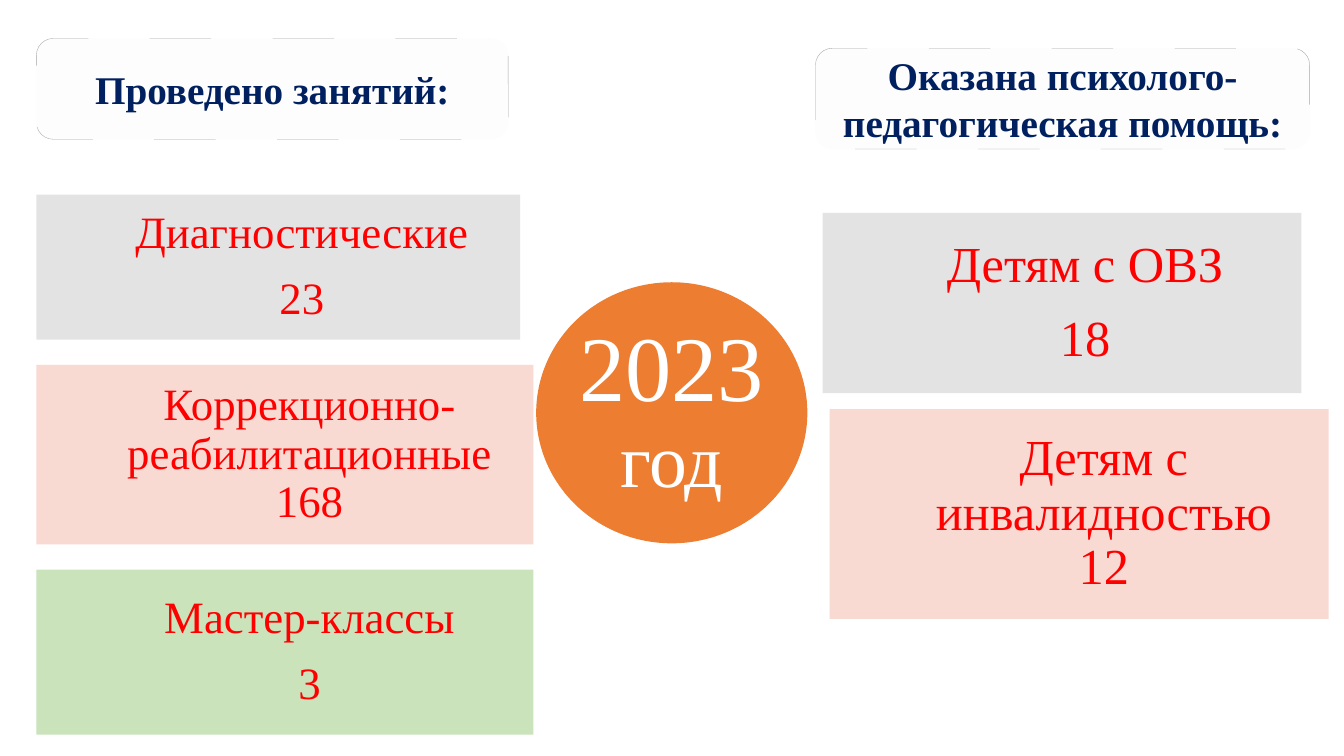
from lxml import etree
from pptx import Presentation
from pptx.dml.color import RGBColor
from pptx.enum.shapes import MSO_SHAPE
from pptx.enum.text import MSO_ANCHOR, PP_ALIGN
from pptx.oxml.ns import qn
from pptx.util import Pt

ROUNDED = MSO_SHAPE.ROUNDED_RECTANGLE
RECTANGLE = MSO_SHAPE.RECTANGLE
OVAL = MSO_SHAPE.OVAL
MIDDLE = MSO_ANCHOR.MIDDLE
CENTER = PP_ALIGN.CENTER

WHITE = RGBColor(0xFF, 0xFF, 0xFF)
NAVY = RGBColor(0x00, 0x20, 0x60)
RED = RGBColor(0xFF, 0x00, 0x00)
ORANGE = RGBColor(0xED, 0x7D, 0x31)
GREY = RGBColor(0xE1, 0xE1, 0xE1)
PINK = RGBColor(0xF8, 0xD7, 0xCE)
GREEN = RGBColor(0xC5, 0xE0, 0xB4)
OUTLINE = RGBColor(0xA6, 0xA6, 0xA6)
OFF_WHITE = RGBColor(0xFD, 0xFD, 0xFD)
FONT = "Times New Roman"

HEADINGS = [
    ("Оказана психолого-педагогическая помощь:", (582.5, 34.5, 353, 72)),
    ("Проведено занятий:", (26, 27.5, 337, 72)),
]
YEAR = [("2023 ", 66), ("год", 54)]
YEAR_BOX = (383, 201.6, 193.7, 186.5)
CARDS = [
    (["Детям с инвалидностью 12"], 36, PINK, (592.6, 292.3, 356.4, 149.8)),
    (["Детям с ОВЗ", "18"], 36, GREY, (587.5, 152, 342, 128.9)),
    (["Диагностические", "23"], 32, GREY, (26, 139, 345.6, 103.7)),
    (["Коррекционно-реабилитационные 168"], 32, PINK, (26, 260.6, 355, 128.2)),
    (["Мастер-классы", "3"], 32, GREEN, (26, 406.8, 355, 118)),
]
CARD_INSET = 21.6
CARD_INDENT = 0.16
LINE_SPACING = 0.9
SPACE_AFTER = 0.39


def add_block(slide, kind, box, fill, insets):
    block = slide.shapes.add_shape(kind, *map(Pt, box))
    block.shadow.inherit = False
    block.fill.solid()
    block.fill.fore_color.rgb = fill
    block.line.fill.background()
    frame = block.text_frame
    frame.word_wrap = True
    frame.vertical_anchor = MIDDLE
    frame.margin_left, frame.margin_top, frame.margin_right, frame.margin_bottom = map(Pt, insets)
    return block


def write(frame, paragraphs, color, bold=False, spaced=True):
    for index, pieces in enumerate(paragraphs):
        paragraph = frame.paragraphs[0] if index == 0 else frame.add_paragraph()
        paragraph.alignment = CENTER
        if spaced:
            paragraph.line_spacing = LINE_SPACING
            paragraph.space_after = Pt(round(pieces[0][1] * SPACE_AFTER, 1))
        for text, size in pieces:
            run = paragraph.add_run()
            run.text = text
            run.font.name = FONT
            run.font.size = Pt(size)
            run.font.bold = bold
            run.font.color.rgb = color


def make_translucent(block):
    color = block.fill._xPr.find(qn("a:solidFill")).find(qn("a:srgbClr"))
    etree.SubElement(color, qn("a:alpha"), val="90000")


def set_long_dashes(block):
    block.line.color.rgb = OUTLINE
    block.line.width = Pt(0.25)
    outline = block.line._get_or_add_ln()
    dashes = etree.SubElement(outline, qn("a:custDash"))
    etree.SubElement(dashes, qn("a:ds"), d="17200000", sp="17200000")


def main():
    deck = Presentation()
    deck.slide_width, deck.slide_height = Pt(960), Pt(540)
    slide = deck.slides.add_slide(deck.slide_layouts[6])

    for heading, box in HEADINGS:
        block = add_block(slide, ROUNDED, box, OFF_WHITE, (7.2, 3.6, 7.2, 3.6))
        set_long_dashes(block)
        write(block.text_frame, [[(heading, 28)]], NAVY, bold=True, spaced=False)

    year = add_block(slide, OVAL, YEAR_BOX, ORANGE, (0, 0, 0, 0))
    write(year.text_frame, [YEAR], WHITE)

    for lines, size, fill, box in CARDS:
        indent = round(box[2] * CARD_INDENT, 1)
        card = add_block(slide, RECTANGLE, box, fill, (indent, CARD_INSET, CARD_INSET, CARD_INSET))
        make_translucent(card)
        write(card.text_frame, [[(line, size)] for line in lines], RED)

    deck.save("out.pptx")


if __name__ == "__main__":
    main()
